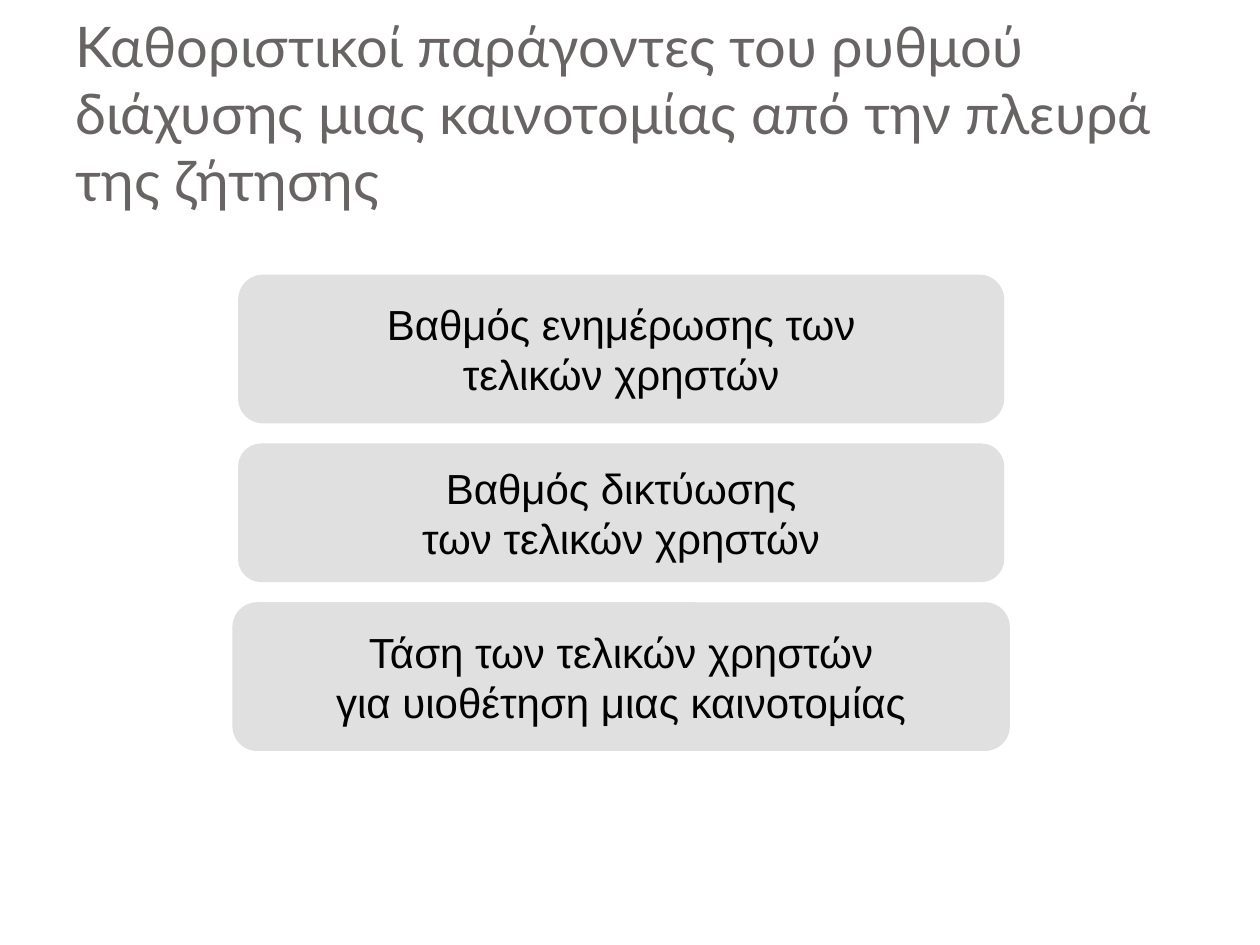
from dataclasses import dataclass

from pptx import Presentation
from pptx.dml.color import RGBColor
from pptx.enum import shapes, text
from pptx.util import Inches, Pt


@dataclass(frozen=True)
class Theme:
    title_font: str = "Lato"
    body_font: str = "Arial"
    title_size: int = 32
    body_size: int = 24
    title_color: str = "696464"
    body_color: str = "000000"
    panel_color: str = "E1E0E0"


def write_text(frame, content, *, font, size, color, align, wrap):
    """Fill the frame with one paragraph; newlines become line breaks."""
    frame.word_wrap = wrap
    frame.vertical_anchor = text.MSO_ANCHOR.MIDDLE
    para = frame.paragraphs[0]
    para.alignment = align
    for number, line in enumerate(content.split("\n")):
        if number:
            para.add_line_break()
        span = para.add_run()
        span.text = line
        span.font.name = font
        span.font.size = Pt(size)
        span.font.color.rgb = RGBColor.from_string(color)


class PageBuilder:
    def __init__(self, page, theme):
        self.page = page
        self.theme = theme

    def title(self, content, left, top, width, height):
        box = self.page.shapes.add_textbox(
            Inches(left), Inches(top), Inches(width), Inches(height))
        write_text(box.text_frame, content, font=self.theme.title_font,
                   size=self.theme.title_size, color=self.theme.title_color,
                   align=text.PP_ALIGN.LEFT, wrap=True)
        box.text_frame.auto_size = text.MSO_AUTO_SIZE.SHAPE_TO_FIT_TEXT

    def factor(self, content, left, top, width, height):
        panel = self.page.shapes.add_shape(
            shapes.MSO_SHAPE.ROUNDED_RECTANGLE,
            Inches(left), Inches(top), Inches(width), Inches(height))
        panel.shadow.inherit = False
        panel.fill.solid()
        panel.fill.fore_color.rgb = RGBColor.from_string(self.theme.panel_color)
        panel.line.fill.background()
        write_text(panel.text_frame, content, font=self.theme.body_font,
                   size=self.theme.body_size, color=self.theme.body_color,
                   align=text.PP_ALIGN.CENTER, wrap=False)


FACTORS = [  # wording, width, height
    ("Βαθμός ενημέρωσης των\nτελικών χρηστών", 6.08, 1.18),
    ("Βαθμός δικτύωσης\nτων τελικών χρηστών", 6.08, 1.1),
    ("Τάση των τελικών χρηστών\nγια υιοθέτηση μιας καινοτομίας", 6.17, 1.18),
]
FACTOR_CENTER = 4.93
FACTOR_TOP = 2.18
FACTOR_GAP = 0.16


def main():
    deck = Presentation()
    deck.slide_width, deck.slide_height = Inches(10), Inches(7.5)
    builder = PageBuilder(deck.slides.add_slide(deck.slide_layouts[6]), Theme())

    top = FACTOR_TOP
    for content, width, height in FACTORS:
        builder.factor(content, FACTOR_CENTER - width / 2, top, width, height)
        top += height + FACTOR_GAP

    builder.title("Καθοριστικοί παράγοντες του ρυθμού διάχυσης μιας "
                  "καινοτομίας από την πλευρά της ζήτησης", 0.5, 0.3, 9, 1.18)
    deck.save("out.pptx")


if __name__ == "__main__":
    main()
